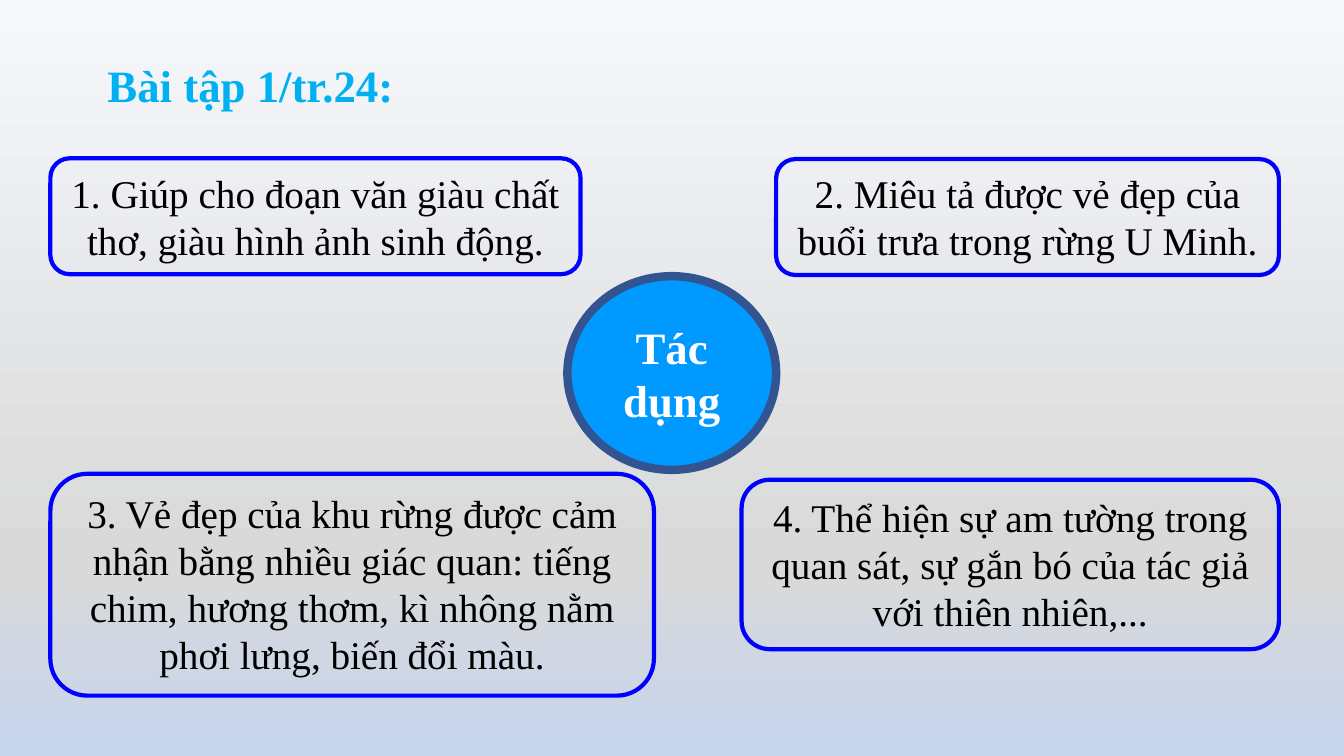
from copy import deepcopy
from dataclasses import dataclass

from pptx import Presentation
from pptx.dml.color import RGBColor
from pptx.enum.shapes import MSO_SHAPE
from pptx.enum.text import MSO_ANCHOR, MSO_AUTO_SIZE, PP_ALIGN
from pptx.oxml.ns import qn
from pptx.slide import Slide
from pptx.text.text import TextFrame
from pptx.util import Cm, Pt


@dataclass(frozen=True)
class Theme:
    font: str = "Times New Roman"
    heading_size: int = 32
    body_size: int = 28
    title: str = "00B0F0"
    body: str = "000000"
    border: str = "0000FF"
    hub: str = "0099FF"
    hub_border: str = "325491"
    hub_text: str = "FFFFFF"
    background: tuple[tuple[float, str], ...] = (
        (0, "F6F8FC"), (0.74, "D9D9D9"), (1, "C7D5ED"))


@dataclass(frozen=True)
class Box:
    left: float
    top: float
    width: float
    height: float
    text: str

    def lengths(self) -> tuple[Cm, Cm, Cm, Cm]:
        return Cm(self.left), Cm(self.top), Cm(self.width), Cm(self.height)


THEME = Theme()
LEFT, RIGHT = 1.27, 32.23
TITLE = Box(2.46, 0.66, 7.9, 2.31, "Bài tập 1/tr.24:")
HUB = Box(14.3, 6.96, 5.26, 4.88, "Tác dụng")
EFFECTS = [
    Box(LEFT, 3.99, 13.36, 2.92,
        "1. Giúp cho đoạn văn giàu chất thơ, giàu hình ảnh sinh động."),
    Box(RIGHT - 12.67, 4.01, 12.67, 2.92,
        "2. Miêu tả được vẻ đẹp của buổi trưa trong rừng U Minh."),
    Box(LEFT, 11.94, 15.21, 5.59,
        "3. Vẻ đẹp của khu rừng được cảm nhận bằng nhiều giác quan: tiếng chim, "
        "hương thơm, kì nhông nằm phơi lưng, biến đổi màu."),
    Box(RIGHT - 13.54, 12.09, 13.54, 4.27,
        "4. Thể hiện sự am tường trong quan sát, sự gắn bó của tác giả "
        "với thiên nhiên,..."),
]


def paint_background(s: Slide) -> None:
    fill = s.background.fill
    fill.gradient()
    fill.gradient_angle = 270
    stops = next(s.element.iter(qn("a:gsLst")))
    stops.append(deepcopy(stops[0]))
    for stop, (position, color) in zip(fill.gradient_stops, THEME.background):
        stop.position = position
        stop.color.rgb = RGBColor.from_string(color)


def write(tf: TextFrame, text: str, size: int, color: str,
          bold: bool = False, align: PP_ALIGN = PP_ALIGN.CENTER) -> None:
    tf.word_wrap = True
    tf.text = text
    p = tf.paragraphs[0]
    p.alignment = align
    font = p.runs[0].font
    font.name = THEME.font
    font.size = Pt(size)
    font.bold = bold
    font.color.rgb = RGBColor.from_string(color)


def add_title(s: Slide, box: Box) -> None:
    tf = s.shapes.add_textbox(*box.lengths()).text_frame
    write(tf, box.text, THEME.heading_size, THEME.title, True, PP_ALIGN.JUSTIFY)
    tf.auto_size = MSO_AUTO_SIZE.SHAPE_TO_FIT_TEXT
    tf.paragraphs[0].line_spacing = 1.5


def add_effect(s: Slide, box: Box) -> None:
    sp = s.shapes.add_shape(MSO_SHAPE.ROUNDED_RECTANGLE, *box.lengths())
    sp.shadow.inherit = False
    sp.fill.background()
    sp.line.color.rgb = RGBColor.from_string(THEME.border)
    sp.line.width = Pt(3)
    tf = sp.text_frame
    write(tf, box.text, THEME.body_size, THEME.body)
    tf.vertical_anchor = MSO_ANCHOR.TOP
    tf.auto_size = MSO_AUTO_SIZE.SHAPE_TO_FIT_TEXT


def add_hub(s: Slide, box: Box) -> None:
    sp = s.shapes.add_shape(MSO_SHAPE.OVAL, *box.lengths())
    sp.shadow.inherit = False
    sp.fill.solid()
    sp.fill.fore_color.rgb = RGBColor.from_string(THEME.hub)
    sp.line.color.rgb = RGBColor.from_string(THEME.hub_border)
    sp.line.width = Pt(6)
    tf = sp.text_frame
    write(tf, box.text, THEME.heading_size, THEME.hub_text, True)
    tf.vertical_anchor = MSO_ANCHOR.MIDDLE


def main() -> None:
    prs = Presentation()
    prs.slide_width, prs.slide_height = Cm(33.87), Cm(19.05)
    s = prs.slides.add_slide(prs.slide_layouts[6])
    paint_background(s)
    add_title(s, TITLE)
    add_hub(s, HUB)
    for box in EFFECTS:
        add_effect(s, box)
    prs.save("out.pptx")


if __name__ == "__main__":
    main()
